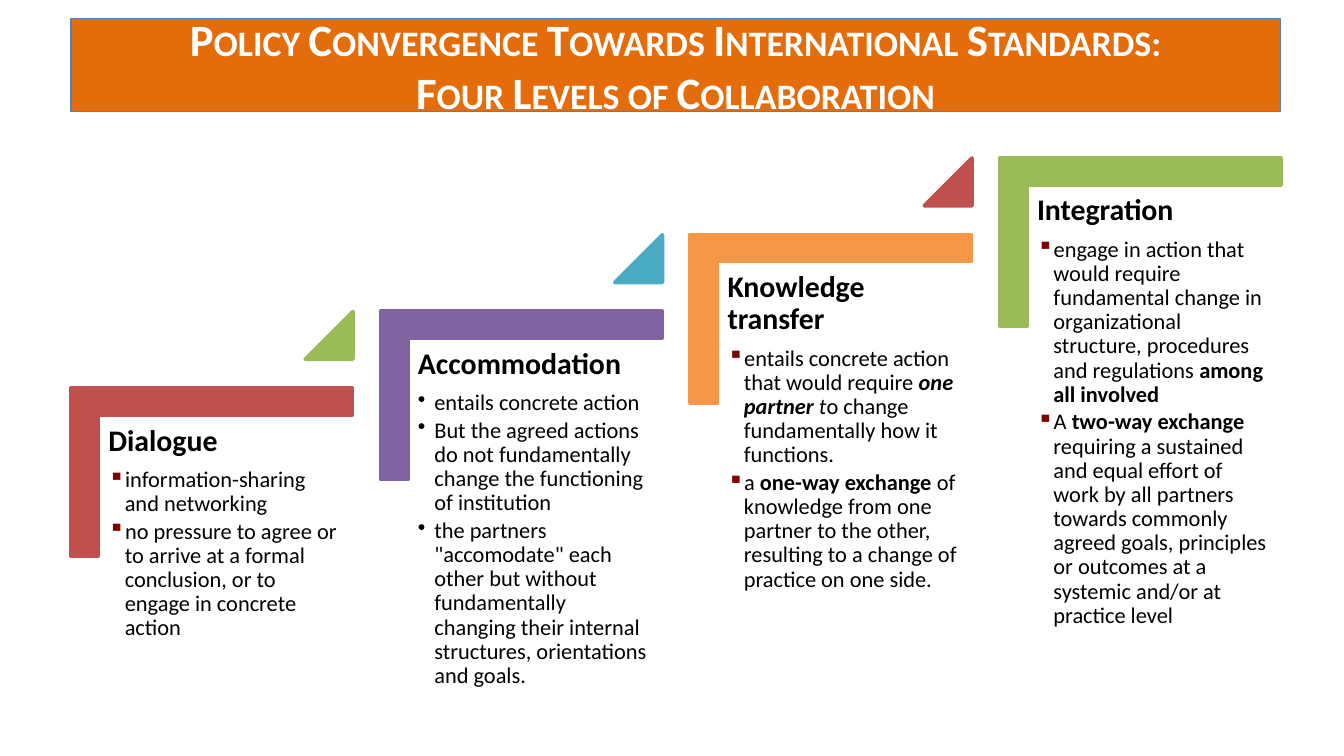
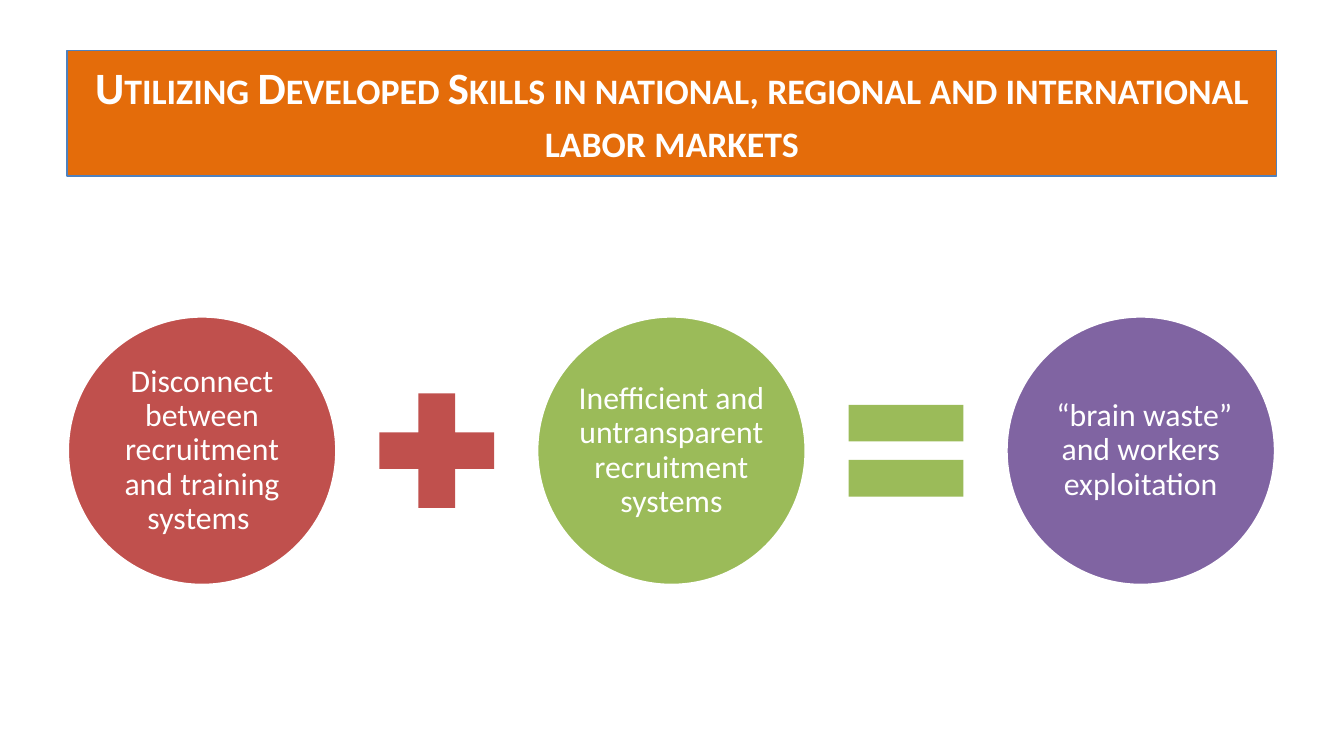
from lxml.etree import SubElement
from pptx import Presentation
from pptx.dml.color import RGBColor
from pptx.enum.shapes import MSO_SHAPE as Preset
from pptx.enum.text import MSO_ANCHOR as Anchor, PP_ALIGN as Align
from pptx.oxml.ns import qn
from pptx.util import Cm, Pt

FONT = "Calibri"
COLORS = {
    "band": "E46C0A", "band_edge": "4F81BD", "red": "C0504D", "green": "9BBB59",
    "purple": "8064A2", "teal": "4BACC6", "orange": "F79646", "bullet": "800000",
    "white": "FFFFFF", "black": "000000",
}
LEVELS_TITLE = ["Policy Convergence Towards International Standards:",
                "Four Levels of Collaboration"]
LEVELS = [
    ("Dialogue", "red", "green", "▪", [
        "information-sharing and networking",
        "no pressure to agree or to arrive at a formal conclusion, or to engage "
        "in concrete action",
    ]),
    ("Accommodation", "purple", "teal", "•", [
        "entails concrete action",
        "But the agreed actions do not fundamentally change the functioning of institution",
        'the partners "accomodate" each other but without fundamentally changing '
        "their internal structures, orientations and goals.",
    ]),
    ("Knowledge transfer", "orange", "red", "▪", [
        [("entails concrete action that would require ", ""), ("one partner ", "bi"),
         ("t", "i"), ("o change fundamentally how it functions.", "")],
        [("a ", ""), ("one-way exchange ", "b"),
         ("of knowledge from one partner to the other, resulting to a change of "
          "practice on one side.", "")],
    ]),
    ("Integration", "green", None, "▪", [
        [("engage in action that would require fundamental change in organizational "
          "structure, procedures and regulations ", ""), ("among all involved", "b")],
        [("A ", ""), ("two-way exchange ", "b"),
         ("requiring a sustained and equal effort of work by all partners towards "
          "commonly agreed goals, principles or outcomes at a systemic and/or at "
          "practice level", "")],
    ]),
]
SKILLS_TITLE = ["Utilizing Developed Skills in national, regional and international "
                "labor markets"]
EQUATION = [
    ("Disconnect between recruitment and training systems ", "red", Preset.MATH_PLUS),
    ("Inefficient and untransparent recruitment systems", "green", Preset.MATH_EQUAL),
    (" “brain waste” and workers exploitation", "purple", None),
]


def rgb(name):
    return RGBColor.from_string(COLORS[name])


def add_bullet(paragraph, char):
    paragraph.level = 1
    properties = paragraph._p.get_or_add_pPr()
    properties.set("marL", str(Cm(0.31)))
    properties.set("indent", str(-Cm(0.31)))
    if char == "▪":
        tint = SubElement(properties, qn("a:buClr"))
        SubElement(tint, qn("a:srgbClr")).set("val", COLORS["bullet"])
    SubElement(properties, qn("a:buChar")).set("char", char)


def write(frame, content, size=12, color="black", style="", align=Align.LEFT,
          spacing=None, after=0, bullet=None, small_caps=False, append=False):
    for index, runs in enumerate(content):
        fresh = index > 0 or append
        paragraph = frame.add_paragraph() if fresh else frame.paragraphs[0]
        if bullet:
            add_bullet(paragraph, bullet)
        paragraph.alignment = align
        paragraph.space_after = Pt(after)
        if spacing:
            paragraph.line_spacing = spacing
        for words, emphasis in [(runs, style)] if isinstance(runs, str) else runs:
            run = paragraph.add_run()
            run.text = words
            font = run.font
            font.name, font.size = FONT, Pt(size)
            font.bold, font.italic = "b" in emphasis, "i" in emphasis
            font.color.rgb = rgb(color)
            if small_caps:
                run._r.get_or_add_rPr().set("cap", "small")


def set_frame(frame, inset, anchor):
    frame.word_wrap = True
    frame.vertical_anchor = anchor
    frame.margin_left = frame.margin_right = Cm(inset)
    frame.margin_top = frame.margin_bottom = Cm(inset)


def add_figure(slide, preset, box, fill, edge=None, width=2):
    figure = slide.shapes.add_shape(preset, *map(Cm, box))
    figure.shadow.inherit = False
    figure.fill.solid()
    figure.fill.fore_color.rgb = rgb(fill)
    if edge:
        figure.line.color.rgb = rgb(edge)
        figure.line.width = Pt(width)
    else:
        figure.line.fill.background()
    return figure


def add_title(slide, lines, left, top, height):
    band = add_figure(slide, Preset.RECTANGLE, (left, top, 22.86, height),
                      "band", "band_edge", 0.75)
    set_frame(band.text_frame, 0.13, Anchor.MIDDLE)
    write(band.text_frame, lines, size=24, color="white", style="b",
          align=Align.CENTER, small_caps=True)


def build_levels(slide):
    step, rise = 5.85, 1.45
    for index, (level, color, marker, bullet, points) in enumerate(LEVELS):
        across, up = index * step, index * rise
        corner = add_figure(slide, Preset.CORNER,
                            (2.41 + across, 6.27 - up, 3.18, 5.31), color, color)
        corner.rotation = 90
        corner.adjustments[0] = corner.adjustments[1] = 0.16
        body = slide.shapes.add_textbox(Cm(1.88 + across), Cm(7.87 - up),
                                        Cm(4.78), Cm(4.19)).text_frame
        set_frame(body, 0.17, Anchor.TOP)
        write(body, [level], size=16, style="b", spacing=0.9, after=5.6)
        write(body, points, spacing=0.9, after=1.8, bullet=bullet, append=True)
        if marker:
            triangle = add_figure(slide, Preset.ISOSCELES_TRIANGLE,
                                  (5.77 + across, 5.89 - up, 0.9, 0.9), marker, marker)
            triangle.adjustments[0] = 1
    add_title(slide, LEVELS_TITLE, 1.34, 0.35, 1.76)


def build_equation(slide):
    add_title(slide, SKILLS_TITLE, 1.27, 0.95, 2.38)
    circle, sign, gap, middle, left = 5.1, 2.95, 0.41, 8.52, 1.27
    for term, color, operator in EQUATION:
        disc = add_figure(slide, Preset.OVAL,
                          (left, middle - circle / 2, circle, circle), color, "white")
        set_frame(disc.text_frame, 0.05, Anchor.MIDDLE)
        write(disc.text_frame, [term], size=17, color="white",
              align=Align.CENTER, spacing=0.9, after=6)
        if operator:
            add_figure(slide, operator,
                       (left + circle + gap, middle - sign / 2, sign, sign), color)
        left += circle + sign + 2 * gap


def main():
    deck = Presentation()
    deck.slide_width, deck.slide_height = Cm(25.4), Cm(14.29)
    for build in (build_levels, build_equation):
        build(deck.slides.add_slide(deck.slide_layouts[6]))
    deck.save("out.pptx")


if __name__ == "__main__":
    main()
